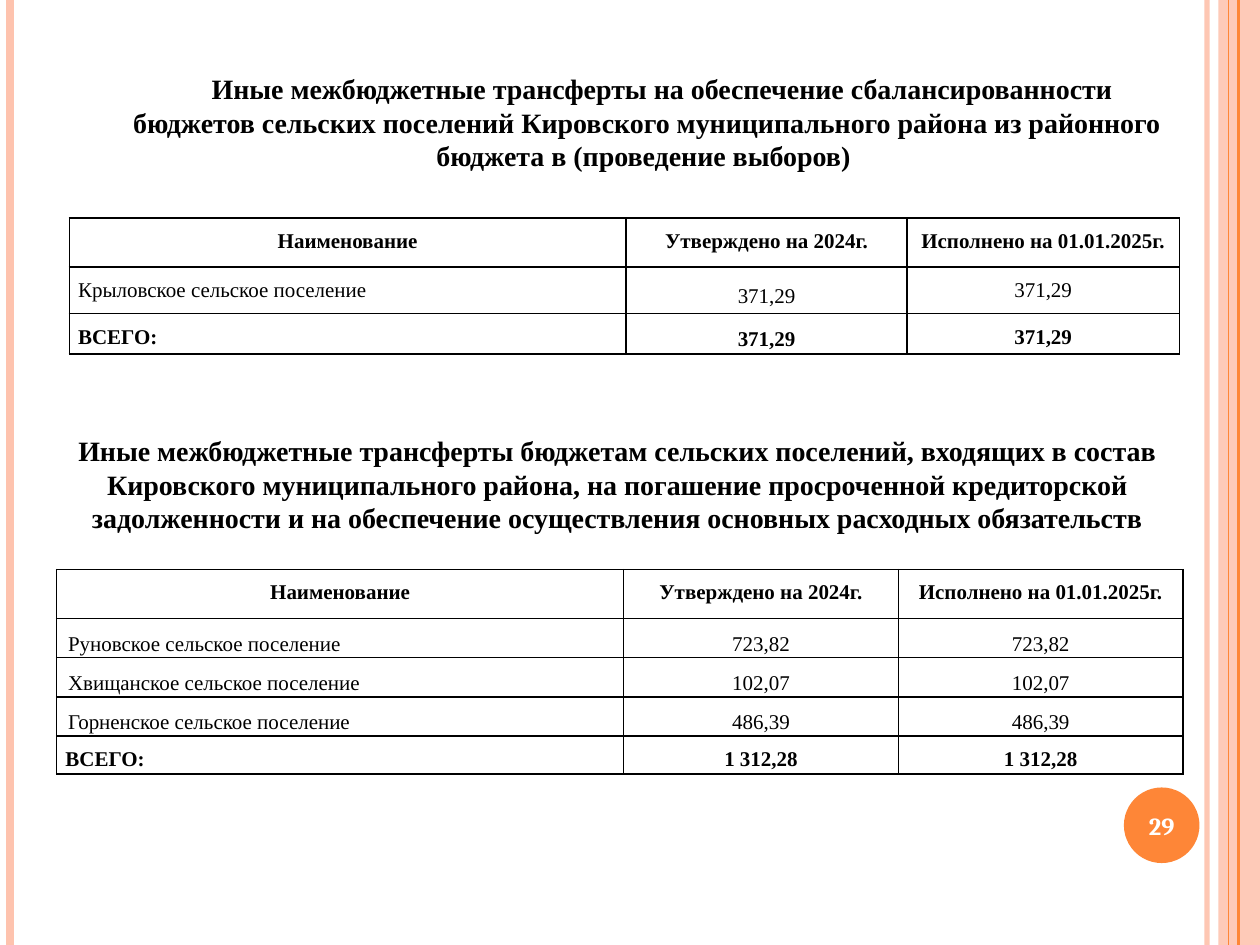
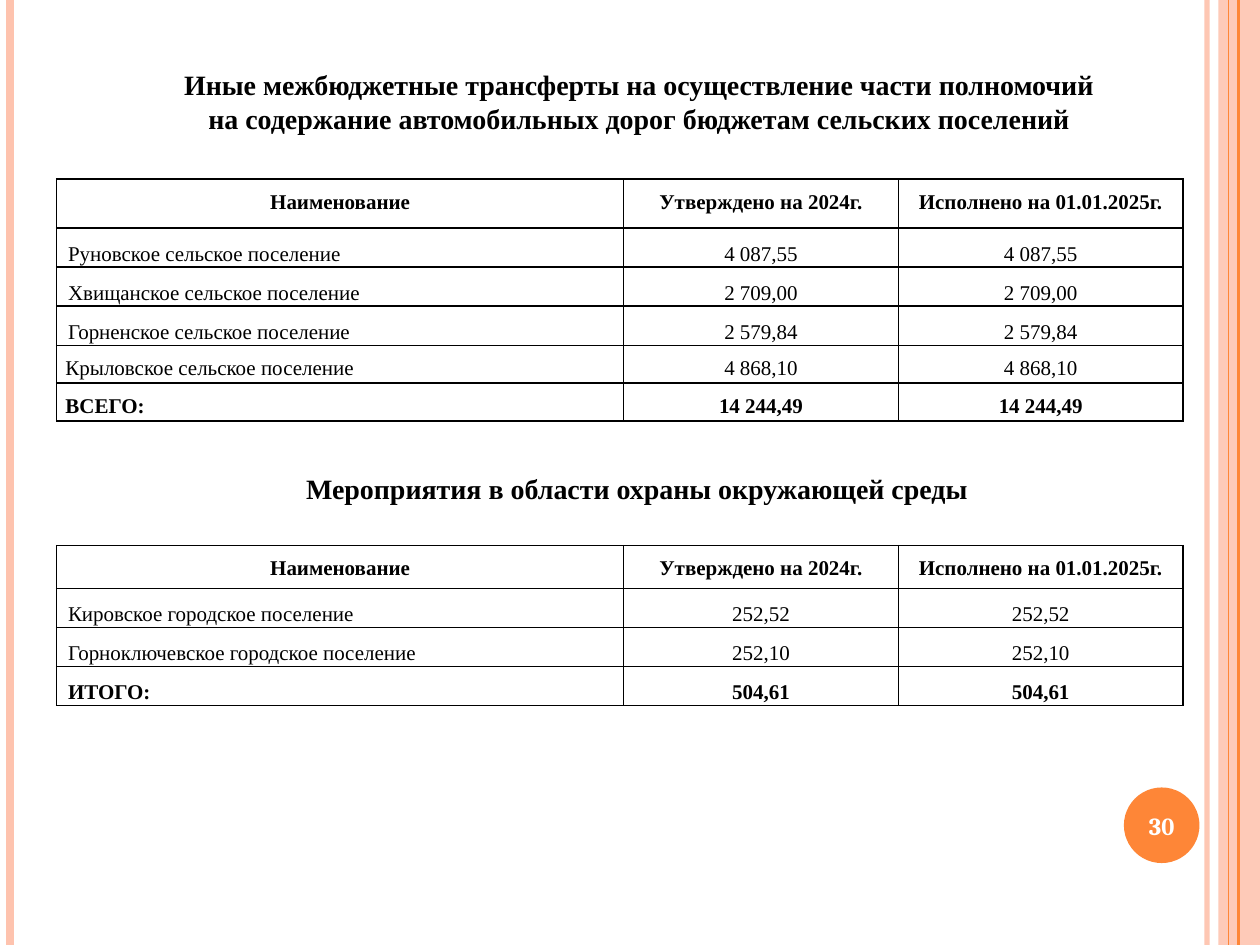
from pptx import Presentation
from pptx import util as u
from pptx.dml.color import RGBColor
from pptx.enum import shapes, text
from pptx.oxml import parse_xml
from pptx.oxml.ns import nsdecls, qn
from lxml import etree
from dataclasses import dataclass


@dataclass(frozen=True)
class Theme:
    ink: RGBColor = RGBColor(0x00, 0x00, 0x00)
    white: RGBColor = RGBColor(0xFF, 0xFF, 0xFF)
    peach: RGBColor = RGBColor(0xFE, 0xC3, 0xAE)
    orange: RGBColor = RGBColor(0xFE, 0x86, 0x37)
    body_font: str = "Times New Roman"
    number_font: str = "Cambria"
    title_size: u.Pt = u.Pt(16)
    cell_size: u.Pt = u.Pt(12)
    number_size: u.Pt = u.Pt(14)


theme = Theme()
CENTER, LEFT = text.PP_ALIGN.CENTER, text.PP_ALIGN.LEFT
TOP, MIDDLE, BOTTOM = (text.MSO_ANCHOR.TOP, text.MSO_ANCHOR.MIDDLE,
                       text.MSO_ANCHOR.BOTTOM)


def write(para, words, align=CENTER, spacing=None, **font_values):
    """Fill a paragraph with one formatted span."""
    para.alignment = align
    if spacing:
        para.line_spacing = spacing
    span = para.add_run()
    span.text = words
    color = font_values.pop("color", theme.ink)
    values = {"name": theme.body_font, "bold": True, **font_values}
    for name, value in values.items():
        setattr(span.font, name, value)
    span.font.color.rgb = color


def set_alpha(fill_parent, percent):
    """Make the solid colour inside an element partly transparent."""
    color = fill_parent.find(".//" + qn("a:srgbClr"))
    etree.SubElement(color, qn("a:alpha")).set("val", str(percent * 1000))


# Vertical rules: x, colour, width in points, opacity
rules = [
    (9.58, theme.peach, 3, 93),
    (0.08, theme.peach, 4.5, 100),
    (9.83, theme.orange, 1.5, 100),
    (9.75, theme.orange, 0.75, 100),
]

# Table layouts: left edge and column widths
narrow = (0.55, [4.42, 2.23, 2.16])
wide = (0.45, [4.5, 2.18, 2.26])
header = ["Наименование", "Утверждено на 2024г.", "Исполнено на 01.01.2025г."]

# Cell styles: anchor of each column, side margin, margin of the name, top margin
plain = ([TOP] * 3, 0.07, 0.07, 0)
mixed = ([TOP, MIDDLE, TOP], 0.07, 0.07, 0)
inset = ([MIDDLE] * 3, 0.01, 0.09, 0.01)

# Titles: place, anchor, first-line indent, paragraphs
# Tables: layout, top, rows of (name, amount, height, style); the last row is the total
pages = [
    {
        "number": "29",
        "titles": [
            ((0.91, 0.52, 8.45, 0.91), TOP, 0.24, [
                "Иные межбюджетные трансферты на обеспечение сбалансированности "
                "бюджетов сельских поселений Кировского муниципального района "
                "из районного бюджета в (проведение выборов) "]),
            ((0.45, 3.5, 8.9, 0.79), BOTTOM, 0, [
                "Иные межбюджетные трансферты бюджетам сельских поселений, "
                "входящих в состав Кировского муниципального района, на погашение "
                "просроченной кредиторской задолженности и на обеспечение "
                "осуществления основных расходных обязательств"]),
        ],
        "tables": [
            (narrow, 1.73, 0.39, [
                ("Крыловское сельское поселение", "371,29", 0.37, mixed),
                ("ВСЕГО:", "371,29", 0.32, mixed)]),
            (wide, 4.52, 0.39, [
                ("Руновское сельское поселение", "723,82", 0.3, inset),
                ("Хвищанское сельское поселение", "102,07", 0.29, inset),
                ("Горненское сельское поселение", "486,39", 0.29, inset),
                ("ВСЕГО:", "1 312,28", 0.28, plain)]),
        ],
    },
    {
        "number": "30",
        "titles": [
            ((0.66, 0.49, 8.88, 0.64), TOP, 0, [
                "Иные межбюджетные трансферты на осуществление части полномочий ",
                "на содержание автомобильных дорог бюджетам сельских поселений "]),
            ((2.25, 3.69, 5.61, 0.38), TOP, 0, [
                "Мероприятия в области охраны окружающей среды"]),
        ],
        "tables": [
            (wide, 1.42, 0.39, [
                ("Руновское сельское поселение", "4 087,55", 0.31, inset),
                ("Хвищанское сельское поселение", "2 709,00", 0.31, inset),
                ("Горненское сельское поселение", "2 579,84", 0.31, inset),
                ("Крыловское сельское поселение", "4 868,10", 0.3, plain),
                ("ВСЕГО:", "14 244,49", 0.3, plain)]),
            (wide, 4.33, 0.34, [
                ("Кировское городское поселение", "252,52", 0.31, inset),
                ("Горноключевское городское поселение", "252,10", 0.31, inset),
                ("ИТОГО:", "504,61", 0.31, inset)]),
        ],
    },
]

deck = Presentation()
deck.slide_width, deck.slide_height = u.Inches(10), u.Inches(7.5)

for content in pages:
    page = deck.slides.add_slide(deck.slide_layouts[6])

    # Side band
    band = page.shapes.add_shape(shapes.MSO_SHAPE.RECTANGLE, u.Inches(9.67), 0,
                                 u.Inches(0.33), deck.slide_height)
    band.shadow.inherit = False
    band.fill.solid()
    band.fill.fore_color.rgb = theme.peach
    band.line.fill.background()
    set_alpha(band.element.spPr, 87)

    # Vertical rules
    for x, color, width, opacity in rules:
        rule = page.shapes.add_connector(shapes.MSO_CONNECTOR.STRAIGHT, u.Inches(x), 0,
                                         u.Inches(x), deck.slide_height)
        rule.line.color.rgb = color
        rule.line.width = u.Pt(width)
        if opacity < 100:
            set_alpha(rule.line._get_or_add_ln(), opacity)
        etree.SubElement(rule.element.spPr, qn("a:effectLst"))

    # Page number badge
    badge = page.shapes.add_shape(shapes.MSO_SHAPE.OVAL, u.Inches(8.92), u.Inches(6.25),
                                  u.Inches(0.6), u.Inches(0.6))
    badge.shadow.inherit = False
    badge.fill.solid()
    badge.fill.fore_color.rgb = theme.orange
    badge.line.fill.background()
    frame_values = {"margin_left": 0, "margin_right": 0, "margin_top": 0,
                    "margin_bottom": 0, "vertical_anchor": MIDDLE}
    for name, value in frame_values.items():
        setattr(badge.text_frame, name, value)
    write(badge.text_frame.paragraphs[0], content["number"], name=theme.number_font,
          size=theme.number_size, color=theme.white)

    # Titles
    for place, anchor, indent, lines in content["titles"]:
        box = page.shapes.add_textbox(*map(u.Inches, place))
        box.text_frame.word_wrap = True
        box.text_frame.vertical_anchor = anchor
        for index, line in enumerate(lines):
            para = (box.text_frame.add_paragraph() if index
                    else box.text_frame.paragraphs[0])
            write(para, line, size=theme.title_size)
            if indent:
                para._p.get_or_add_pPr().set("indent", str(u.Inches(indent)))

    # Tables
    for (left, widths), top, header_height, entries in content["tables"]:
        rows = [(header, header_height, plain)]
        rows += [([name, amount, amount], height, style)
                 for name, amount, height, style in entries]
        heights = [height for _, height, _ in rows]
        table = page.shapes.add_table(
            len(rows), len(widths), u.Inches(left), u.Inches(top),
            u.Inches(sum(widths)), u.Inches(sum(heights))).table
        table.first_row = table.horz_banding = False
        for column, width in zip(table.columns, widths):
            column.width = u.Inches(width)

        for r, (words, height, style) in enumerate(rows):
            anchors, side, name_margin, top_margin = style
            table.rows[r].height = u.Inches(height)
            for c, word in enumerate(words):
                cell = table.cell(r, c)
                is_name = c == 0 and r > 0
                cell_values = {
                    "margin_left": u.Inches(name_margin if is_name else side),
                    "margin_right": u.Inches(side),
                    "margin_top": u.Inches(top_margin),
                    "margin_bottom": 0,
                    "vertical_anchor": anchors[c],
                }
                for name, value in cell_values.items():
                    setattr(cell, name, value)
                write(cell.text_frame.paragraphs[0], word, LEFT if is_name else CENTER,
                      1.5, size=theme.cell_size, bold=r in (0, len(rows) - 1))
                # Borders go ahead of the fill
                for edge in ("lnL", "lnR", "lnT", "lnB"):
                    cell._tc.get_or_add_tcPr().append(parse_xml(
                        f'<a:{edge} {nsdecls("a")} w="{u.Pt(1)}"><a:solidFill>'
                        f'<a:srgbClr val="{theme.ink}"/></a:solidFill></a:{edge}>'))
                cell.fill.background()

deck.save("out.pptx")
